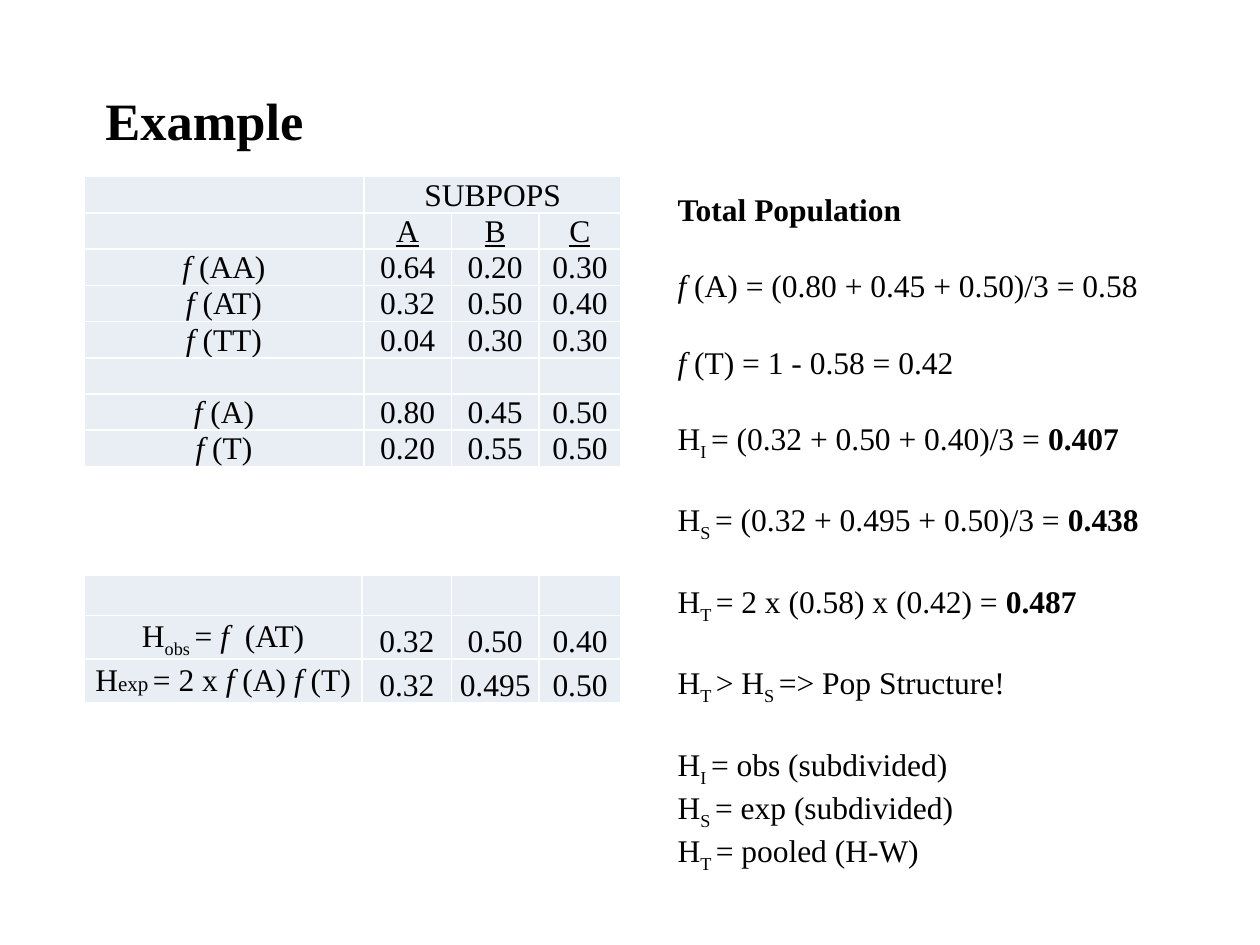
from pptx import Presentation
from pptx.dml.color import RGBColor
from pptx.enum.text import MSO_ANCHOR, MSO_AUTO_SIZE, PP_ALIGN
from pptx.util import Pt
from lxml import etree

BOTTOM, TOP = MSO_ANCHOR.BOTTOM, MSO_ANCHOR.TOP
LEFT, CENTER = PP_ALIGN.LEFT, PP_ALIGN.CENTER
NO_FIT = MSO_AUTO_SIZE.NONE
FACE, INK, PALE = "Times New Roman", "000000", "E9EDF4"

# Text is cut at "|"; a piece may open with a style mark:
# ~ italic, * bold, _ subscript, = underline, ^ small
MARKS = "~*_=^"

FREQS = [
    ["", "SUBPOPS", "", ""],
    ["", "|=A", "|=B", "|=C"],
    ["|~f |(AA)", "0.64", "0.20", "0.30"],
    ["|~f |(AT)", "0.32", "0.50", "0.40"],
    ["|~f |(TT)", "0.04", "0.30", "0.30"],
    ["", "", "", ""],
    ["|~f |(A)", "0.80", "0.45", "0.50"],
    ["|~f |(T)", "0.20", "0.55", "0.50"],
]
HETS = [
    ["", "", "", ""],
    ["H|_obs || = |~f  |(AT)".replace("|| = ", "||= "), "0.32", "0.50", "0.40"],
    ["H|^exp|_ ||= 2 x |~f |(A) |~f |(T)", "0.32", "0.495", "0.50"],
]

# Each group of lines stands apart from the one before
GROUPS = [
    ["|*Total Population"],
    ["|~f |(A) = (0.80 + 0.45 + 0.50)/3 = 0.58"],
    ["|~f |(T) = 1 - 0.58 = 0.42"],
    ["H|_I ||= (0.32 + 0.50 + 0.40)/3 = |*0.407"],
    ["H|_S ||= (0.32 + 0.495 + 0.50)/3 = |*0.438"],
    ["H|_T ||= 2 x (0.58) x (0.42) = |*0.487"],
    ["H|_T |> H|_S ||=> Pop Structure!"],
    ["H|_I ||= obs (subdivided)",
     "H|_S ||= exp (subdivided)",
     "H|_T ||= pooled (H-W)"],
]


def color(code):
    return RGBColor.from_string(code)


def place(shape, left, top, width, height):
    shape.left, shape.top = Pt(left), Pt(top)
    shape.width, shape.height = Pt(width), Pt(height)


def style(para, size=18, align=LEFT):
    para.alignment = align
    para.font.name, para.font.size = FACE, Pt(size)
    para.font.color.rgb = color(INK)


def add_runs(para, text):
    """Add the pieces of a marked text; an empty piece shields a plain "="."""
    plain = True
    for piece in text.split("|"):
        if not piece:
            plain = not plain if para.runs else False
            continue
        mark = piece[0] if piece[0] in MARKS else ""
        if mark == "=" and para.runs:
            mark = ""
        run = para.add_run()
        run.text = piece[len(mark):]
        if mark == "~":
            run.font.italic = True
        elif mark == "*":
            run.font.bold = True
        elif mark == "=":
            run.font.underline = True
        elif mark == "^":
            run.font.size = Pt(12)
        elif mark == "_":
            run.font._element.set("baseline", "-25000")


def add_title(slide, text):
    title = slide.shapes.title
    place(title, 53, 10, 129, 80)
    frame = title.text_frame
    frame.text = text
    frame.word_wrap, frame.auto_size = False, NO_FIT
    frame.vertical_anchor = BOTTOM
    style(frame.paragraphs[0], 30)
    frame.paragraphs[0].font.bold = True


def add_lines(slide, groups):
    body = slide.placeholders[1]
    place(body, 380, 105, 307, 378)
    frame = body.text_frame
    frame.auto_size, frame.vertical_anchor = NO_FIT, TOP
    first = True
    for group in groups:
        for i, line in enumerate(group):
            para = frame.paragraphs[0] if first else frame.add_paragraph()
            para.space_before = Pt(0 if first or i else 22)
            style(para)
            # No bullet and no hanging indent
            props = para._p.get_or_add_pPr()
            props.set("marL", "0")
            props.set("indent", "0")
            none = etree.Element(
                "{http://schemas.openxmlformats.org/drawingml/2006/main}buNone")
            props.insert(list(props).index(props.find("{*}defRPr")), none)
            add_runs(para, line)
            first = False


def add_grid(slide, top, rows, cols, highs):
    frame = slide.shapes.add_table(len(rows), len(cols), Pt(48), Pt(top),
                                   Pt(sum(cols)), Pt(sum(highs)))
    grid = frame.table
    grid.first_row = grid.horz_banding = False
    for col, width in zip(grid.columns, cols):
        col.width = Pt(width)
    for row, high, texts in zip(grid.rows, highs, rows):
        row.height = Pt(high)
        for cell, text in zip(row.cells, texts):
            cell.fill.solid()
            cell.fill.fore_color.rgb = color(PALE)
            cell.margin_left = cell.margin_right = Pt(0.75)
            cell.margin_top = cell.margin_bottom = Pt(0)
            cell.vertical_anchor = BOTTOM
            para = cell.text_frame.paragraphs[0]
            style(para, align=CENTER)
            add_runs(para, text)
    return grid


def main():
    deck = Presentation()
    deck.slide_width, deck.slide_height = Pt(720), Pt(540)
    slide = deck.slides.add_slide(deck.slide_layouts[1])

    add_title(slide, "Example")

    # Genotype and allele frequencies, with one heading over the subpops
    freqs = add_grid(slide, 101, FREQS, [160, 50, 50, 47], [20.7] * 8)
    freqs.cell(0, 1).merge(freqs.cell(0, 3))

    # Observed and expected heterozygosity
    add_grid(slide, 329, HETS, [159, 51, 50, 47], [22.7, 25, 25])

    add_lines(slide, GROUPS)
    deck.save("out.pptx")


if __name__ == "__main__":
    main()
